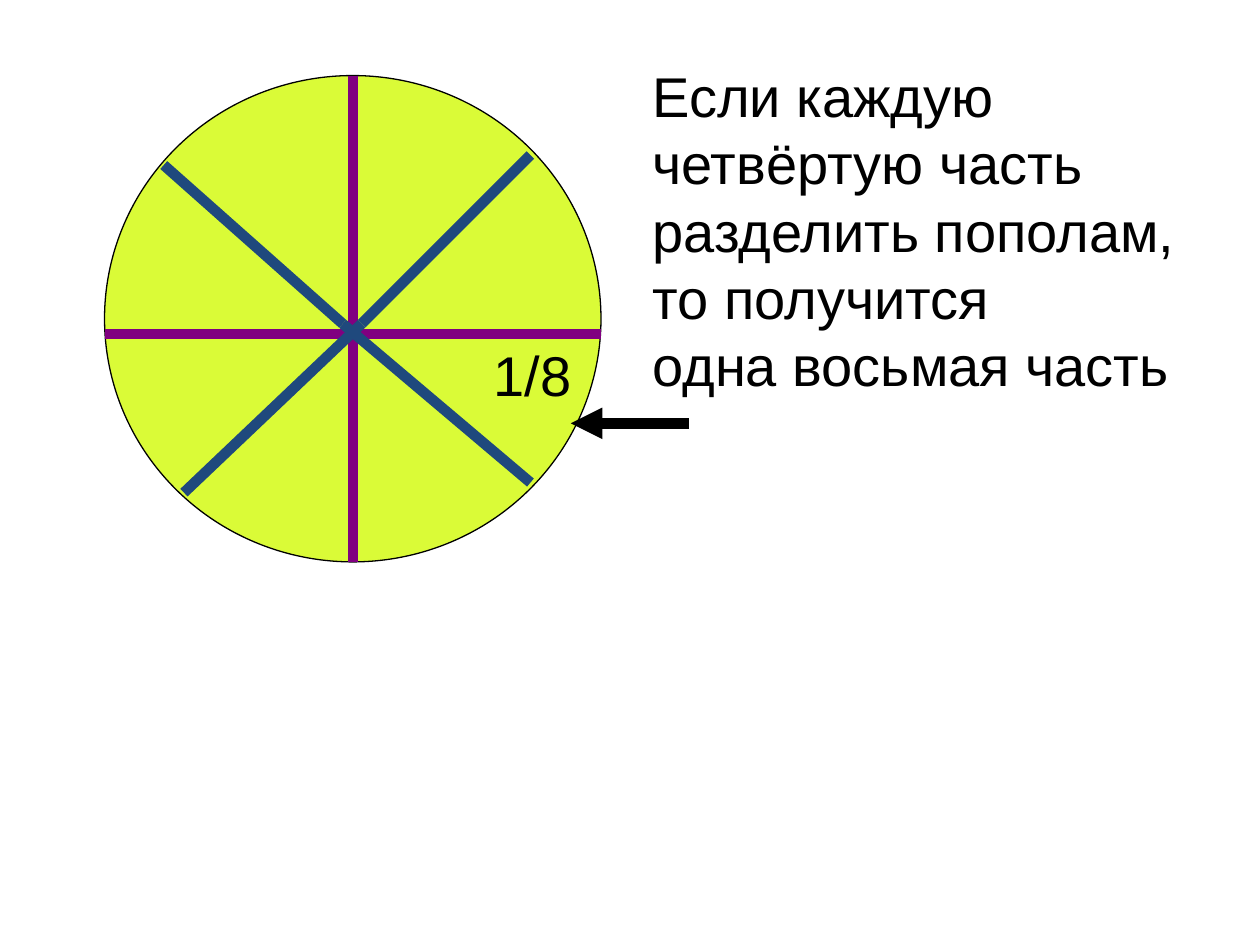
from lxml.etree import SubElement
from pptx import Presentation
from pptx.dml.color import RGBColor
from pptx.enum.shapes import MSO_CONNECTOR, MSO_SHAPE
from pptx.oxml.ns import qn
from pptx.util import Inches, Pt


def rgb(value):
    """Turn a hex string into a colour."""
    return RGBColor.from_string(value)


def add_line(s, x1, y1, x2, y2, color, arrow=False):
    """Draw a thick line, with an arrowhead at its end if asked."""
    line = s.shapes.add_connector(
        MSO_CONNECTOR.STRAIGHT, Inches(x1), Inches(y1), Inches(x2), Inches(y2))
    line.line.color.rgb = rgb(color)
    line.line.width = Pt(6)
    if arrow:
        SubElement(line.line._get_or_add_ln(), qn("a:tailEnd"), type="triangle")
    SubElement(line._element.spPr, qn("a:effectLst"))


def add_text(s, x, y, w, h, lines):
    """Place one paragraph per line in a text box."""
    tf = s.shapes.add_textbox(Inches(x), Inches(y), Inches(w), Inches(h)).text_frame
    tf.word_wrap = True
    tf.text = "\n".join(lines)
    for p in tf.paragraphs:
        for r in p.runs:
            r.font.name = "Arial"
            r.font.size = Pt(32)
            r.font.color.rgb = rgb("000000")


def add_circle(s, x, y, w, h):
    """Draw the circle cut into eighths, with one part labelled."""
    sp = s.shapes.add_shape(
        MSO_SHAPE.OVAL, Inches(x), Inches(y), Inches(w), Inches(h))
    sp.shadow.inherit = False
    sp.fill.solid()
    sp.fill.fore_color.rgb = rgb("DAFB37")
    sp.line.color.rgb = rgb("000000")
    sp.line.width = Pt(0.75)

    middle = y + 2.05
    add_line(s, x, middle, x + w, middle, "800080")
    add_line(s, x + w / 2, y, x + w / 2, y + h, "800080")
    rays = [(2.04, 3.38, 0.63), (2.04, 0.63, 3.31),
            (1.89, 3.38, 3.23), (1.89, 0.47, 0.71)]
    for start, end_x, end_y in rays:
        add_line(s, x + start, y + 1.97, x + end_x, y + end_y, "1F497D")

    add_text(s, x + 2.99, middle, 0.89, 0.63, ["1/8"])
    add_line(s, x + 4.64, y + 2.76, x + 3.7, y + 2.76, "000000", arrow=True)


def main():
    """Build the slide about eighths."""
    prs = Presentation()
    prs.slide_width, prs.slide_height = Inches(10), Inches(7.5)
    s = prs.slides.add_slide(prs.slide_layouts[6])
    add_circle(s, 0.83, 0.6, 3.94, 3.86)
    add_text(s, 5.08, 0.44, 4.5, 2.77, [
        "Если каждую",
        "четвёртую часть",
        "разделить пополам,",
        "то получится",
        "одна восьмая часть",
    ])
    prs.save("out.pptx")


if __name__ == "__main__":
    main()
